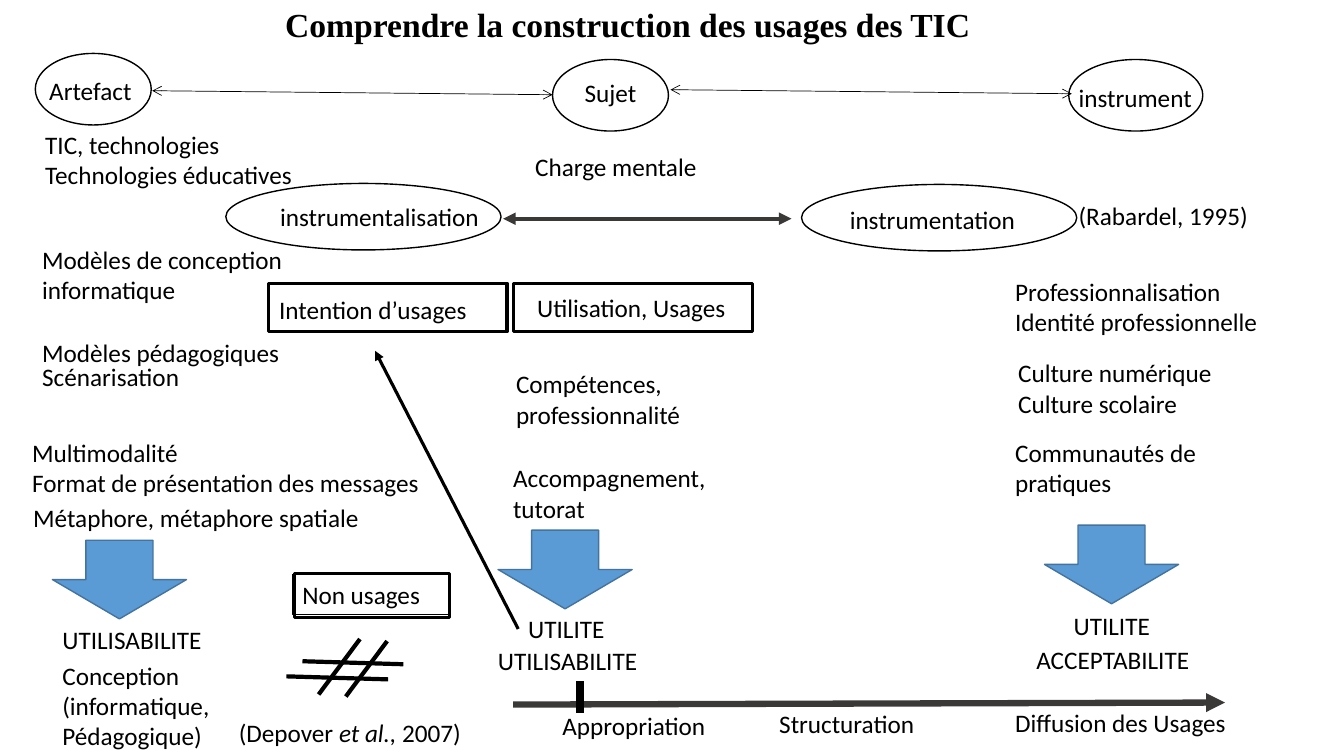
from lxml.etree import SubElement
from pptx import Presentation
from pptx.dml.color import RGBColor
from pptx.enum.shapes import MSO_CONNECTOR, MSO_SHAPE
from pptx.enum.text import MSO_ANCHOR, MSO_AUTO_SIZE, PP_ALIGN
from pptx.oxml.ns import qn
from pptx.util import Emu, Pt

EMU_PER_PX = 9144  # 100 px to the inch
COLORS = {"black": "000000", "white": "FFFFFF", "gray": "3B3838",
          "blue": "5B9BD5", "dark blue": "43739E"}

TITLE = "Comprendre la construction des usages des TIC"

# left, top, width, height
ELLIPSES = [
    (795, 183, 273, 66),
    (224, 182, 273, 66),
    (1060, 59, 133, 71),
    (35, 53, 115, 71),
    (548, 59, 115, 71),
]
FRAMES = [(266, 281, 237, 48), (509, 281, 237, 48), (292, 569, 154, 44)]
NON_USAGES_BOX = (290, 570, 156, 40)

# left, top
DOWN_ARROWS = [(52, 536), (494, 526), (1036, 521)]
DOWN_ARROW_SIZE = (133, 78)

# left, top, width, number of lines, text
LABELS = [
    (1060, 77, 274, 1, "instrument"),
    (39, 70, 274, 1, "Artefact"),
    (570, 72, 274, 1, "Sujet"),
    (268, 195, 250, 1, "instrumentalisation"),
    (833, 198, 227, 1, "instrumentation"),
    (521, 145, 274, 1, "Charge mentale"),
    (523, 285, 211, 1, "Utilisation, Usages"),
    (267, 287, 379, 1, "Intention d’usages"),
    (35, 123, 365, 2, "TIC, technologies\nTechnologies éducatives"),
    (32, 237, 274, 2, "Modèles de conception informatique"),
    (32, 330, 274, 1, "Modèles pédagogiques"),
    (32, 354, 379, 1, "Scénarisation"),
    (22, 429, 462, 3, "Multimodalité\nFormat de présentation des messages"),
    (23, 493, 379, 1, "Métaphore, métaphore spatiale"),
    (502, 361, 274, 2, "Compétences, professionnalité"),
    (499, 454, 222, 2, "Accompagnement, tutorat"),
    (997, 269, 274, 2, "Professionnalisation\nIdentité professionnelle"),
    (1000, 350, 274, 2, "Culture numérique\nCulture scolaire"),
    (997, 429, 274, 2, "Communautés de pratiques"),
    (52, 614, 178, 1, "UTILISABILITE"),
    (52, 650, 201, 3, "Conception (informatique,\nPédagogique)"),
    (514, 604, 178, 1, "UTILITE"),
    (484, 635, 178, 1, "UTILISABILITE"),
    (1055, 601, 178, 1, "UTILITE"),
    (1018, 634, 178, 1, "ACCEPTABILITE"),
    (548, 700, 234, 1, "Appropriation"),
    (763, 698, 231, 1, "Structuration"),
    (997, 697, 232, 1, "Diffusion des Usages"),
]
RABARDEL = (1060, 194, 190, 40)
DEPOVER = (227, 707, 243, 40)

# start, end, color, weight in points, arrowhead at start, arrowhead at end
LINES = [
    ((509, 699), (1215, 697), "gray", 4.5, None, "triangle"),
    ((499, 217), (785, 217), "gray", 3, "triangle", "triangle"),
    ((151, 90), (548, 94), "black", 0.5, "arrow", "arrow"),
    ((665, 89), (1063, 93), "black", 0.5, "arrow", "arrow"),
    ((372, 348), (514, 624), "black", 2.25, "triangle", None),
    ((357, 634), (316, 689), "black", 3, None, None),
    ((384, 636), (343, 691), "black", 3, None, None),
    ((400, 659), (300, 656), "black", 3, None, None),
    ((385, 674), (284, 671), "black", 3, None, None),
    ((575, 676), (575, 707), "black", 6, None, None),
]


def px(*lengths):
    return [Emu(length * EMU_PER_PX) for length in lengths]


def rgb(name):
    return RGBColor.from_string(COLORS[name])


def write(shape, pieces, size=18, font="Calibri", bold=False, wrap=True):
    """Fill the shape with text; pieces after the first are (text, italic) runs."""
    frame = shape.text_frame
    frame.text = pieces[0]
    for text, italic in pieces[1:]:
        run = frame.paragraphs[0].add_run()
        run.text = text
        run.font.italic = italic
    frame.word_wrap = wrap
    frame.auto_size = MSO_AUTO_SIZE.SHAPE_TO_FIT_TEXT
    frame.vertical_anchor = MSO_ANCHOR.TOP
    for paragraph in frame.paragraphs:
        paragraph.alignment = PP_ALIGN.LEFT
        for run in paragraph.runs:
            run.font.size = Pt(size)
            run.font.name = font
            run.font.bold = bold
            run.font.color.rgb = rgb("black")


def add_label(slide, box, *pieces, **style):
    write(slide.shapes.add_textbox(*px(*box)), pieces, **style)


def add_outline(slide, kind, box, weight, fill=None, line="black"):
    shape = slide.shapes.add_shape(kind, *px(*box))
    shape.shadow.inherit = False
    if fill:
        shape.fill.solid()
        shape.fill.fore_color.rgb = rgb(fill)
    else:
        shape.fill.background()
    shape.line.color.rgb = rgb(line)
    shape.line.width = Pt(weight)
    return shape


def add_line(slide, start, end, color, weight, head, tail):
    connector = slide.shapes.add_connector(MSO_CONNECTOR.STRAIGHT, *px(*start, *end))
    connector.line.color.rgb = rgb(color)
    connector.line.width = Pt(weight)
    outline = connector.line._get_or_add_ln()
    for tag, arrowhead in (("a:headEnd", head), ("a:tailEnd", tail)):
        if arrowhead:
            SubElement(outline, qn(tag), type=arrowhead)
    SubElement(connector._element.spPr, qn("a:effectLst"))


def main():
    presentation = Presentation()
    presentation.slide_width, presentation.slide_height = px(1333, 750)
    slide = presentation.slides.add_slide(presentation.slide_layouts[6])

    for box in ELLIPSES:
        add_outline(slide, MSO_SHAPE.OVAL, box, 1, fill="white")
    for position in DOWN_ARROWS:
        add_outline(slide, MSO_SHAPE.DOWN_ARROW, position + DOWN_ARROW_SIZE, 1,
                    fill="blue", line="dark blue")

    add_label(slide, (273, -1, 707, 50), TITLE, size=24,
              font="Times New Roman", bold=True, wrap=False)
    for left, top, width, line_count, text in LABELS:
        add_label(slide, (left, top, width, 10 + 30 * line_count), text)
    add_label(slide, RABARDEL, "(Rabardel, 1995)", wrap=False)
    add_label(slide, DEPOVER, "(Depover ", ("et al., ", True), ("2007)", False), wrap=False)

    for line in LINES:
        add_line(slide, *line)
    write(add_outline(slide, MSO_SHAPE.RECTANGLE, NON_USAGES_BOX, 0.75), ["Non usages"])
    for box in FRAMES:
        add_outline(slide, MSO_SHAPE.RECTANGLE, box, 2.25)

    presentation.save("out.pptx")


if __name__ == "__main__":
    main()
